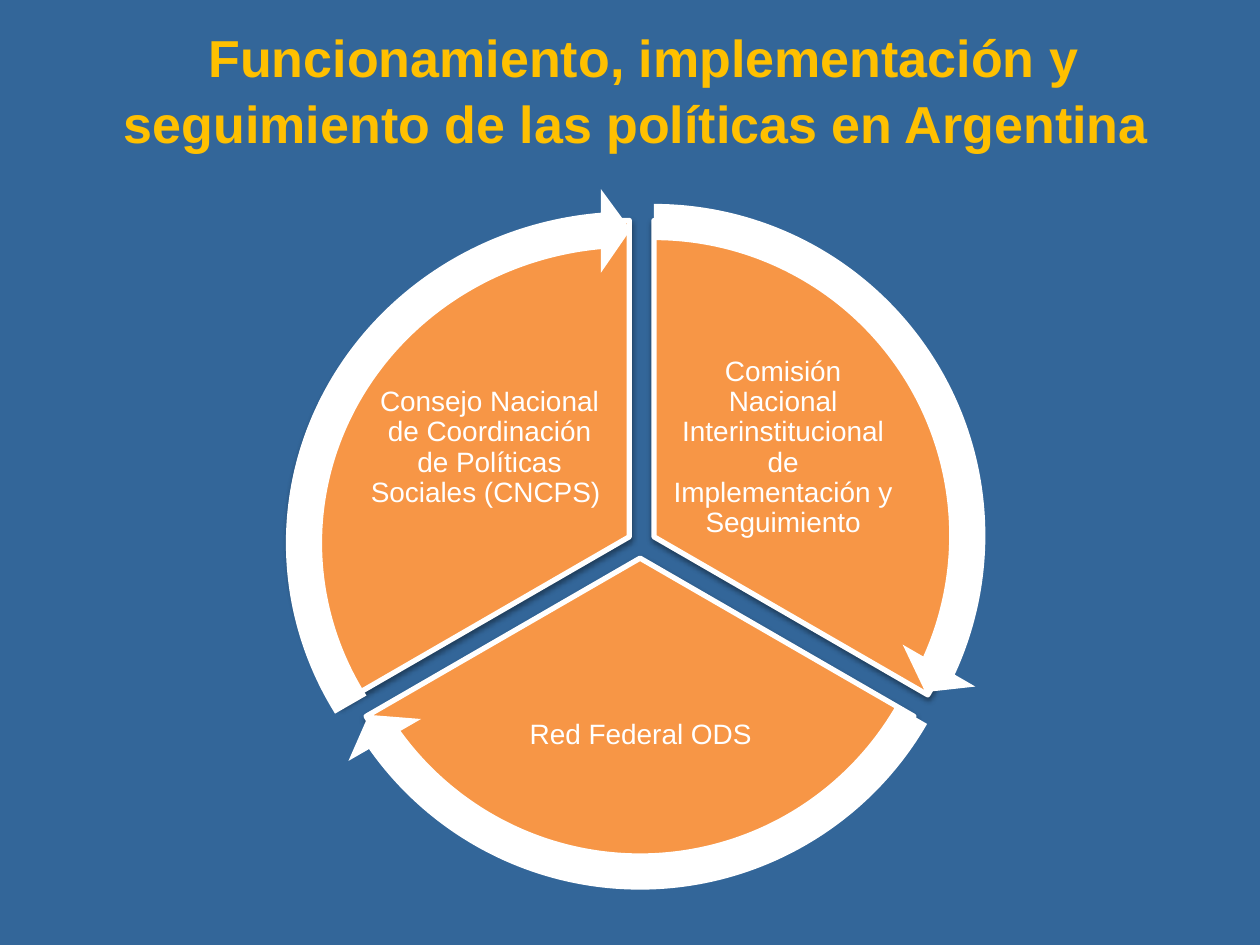
from dataclasses import dataclass

from lxml import etree
from pptx import Presentation
from pptx import util as u
from pptx.dml.color import RGBColor
from pptx.enum import shapes, text
from pptx.oxml import ns

BLUE = RGBColor(0x33, 0x66, 0x99)
GOLD = RGBColor(0xFF, 0xC0, 0x00)
ORANGE = RGBColor(0xF7, 0x96, 0x46)
WHITE = RGBColor(0xFF, 0xFF, 0xFF)
FONT = "Arial"
TITLE = "Funcionamiento, implementación y seguimiento de las políticas en Argentina "


@dataclass
class Box:
    left: float
    top: float
    width: float
    height: float

    def emu(self) -> list:
        return [u.Inches(n) for n in (self.left, self.top, self.width, self.height)]


@dataclass
class Label:
    words: str
    box: Box
    size: float
    color: RGBColor = WHITE
    bold: bool = False
    pad: float = 0.02
    lead: float = 0.9


@dataclass
class Slice:
    box: Box
    start: float
    end: float
    label: Label


@dataclass
class Arrow:
    box: Box
    start: float
    end: float


SLICES = [
    Slice(Box(2.68, 1.75, 5.02, 5.02), 270, 30,
          Label("Comisión Nacional Interinstitucional de Implementación y Seguimiento",
                Box(5.32, 2.81, 1.79, 1.49), 16)),
    Slice(Box(2.57, 1.92, 5.02, 5.02), 30, 150,
          Label("Red Federal ODS ", Box(3.77, 5.18, 2.69, 1.31), 16)),
    Slice(Box(2.3, 1.75, 5.39, 5.02), 150, 270,
          Label("Consejo Nacional de Coordinación de Políticas Sociales (CNCPS) ",
                Box(2.92, 2.81, 1.93, 1.49), 16)),
]
ARROWS = [
    Arrow(Box(2.37, 1.43, 5.64, 5.64), 269.99, 24.54),
    Arrow(Box(2.26, 1.61, 5.64, 5.64), 30.01, 144.53),
    Arrow(Box(2.08, 1.49, 5.85, 5.64), 150, 264.55),
]


def turn(deg: float) -> float:
    return deg * 0.6


def write(pool, label: Label) -> None:
    frame = pool.add_textbox(*label.box.emu()).text_frame
    frame.word_wrap = True
    frame.vertical_anchor = text.MSO_ANCHOR.MIDDLE
    frame.margin_left = frame.margin_right = u.Inches(label.pad)
    frame.margin_top = frame.margin_bottom = u.Inches(label.pad)
    para = frame.paragraphs[0]
    para.alignment = text.PP_ALIGN.CENTER
    para.line_spacing = label.lead
    run = para.add_run()
    run.text = label.words
    run.font.name = FONT
    run.font.size = u.Pt(label.size)
    run.font.bold = label.bold
    run.font.color.rgb = label.color


def draw(pool, kind: shapes.MSO_SHAPE, box: Box, fill: RGBColor, turns: list):
    shape = pool.add_shape(kind, *box.emu())
    for i, value in enumerate(turns):
        shape.adjustments[i] = value
    shape.fill.solid()
    shape.fill.fore_color.rgb = fill
    shape.shadow.inherit = False
    return shape


def shade(shape) -> None:
    effects = shape._element.spPr.find(ns.qn("a:effectLst"))
    outer = etree.SubElement(effects, ns.qn("a:outerShdw"), blurRad=str(u.Pt(3.1)),
                             dist=str(u.Pt(1.6)), dir="5400000", rotWithShape="0")
    color = etree.SubElement(outer, ns.qn("a:srgbClr"), val="000000")
    etree.SubElement(color, ns.qn("a:alpha"), val="38000")


def add_slice(pool, part: Slice) -> None:
    pie = draw(pool, shapes.MSO_SHAPE.PIE, part.box, ORANGE,
               [turn(part.start), turn(part.end)])
    pie.line.color.rgb = WHITE
    pie.line.width = u.Pt(3)
    shade(pie)
    write(pool, part.label)


def add_arrow(pool, arrow: Arrow) -> None:
    shape = draw(pool, shapes.MSO_SHAPE.CIRCULAR_ARROW, arrow.box, WHITE,
                 [0.051, 3.275, turn(arrow.end), turn(arrow.start), 0.059])
    shape.line.fill.background()


def main() -> None:
    deck = Presentation()
    deck.slide_width, deck.slide_height = u.Inches(10), u.Inches(7.5)
    slide = deck.slides.add_slide(deck.slide_layouts[6])
    slide.background.fill.solid()
    slide.background.fill.fore_color.rgb = BLUE
    write(slide.shapes, Label(TITLE, Box(0.35, 0.39, 9.52, 0.62), 29.7, GOLD,
                              bold=True, pad=0.1, lead=1.05))
    wheel = slide.shapes.add_group_shape().shapes
    for part in SLICES:
        add_slice(wheel, part)
    for arrow in ARROWS:
        add_arrow(wheel, arrow)
    deck.save("out.pptx")


if __name__ == "__main__":
    main()
